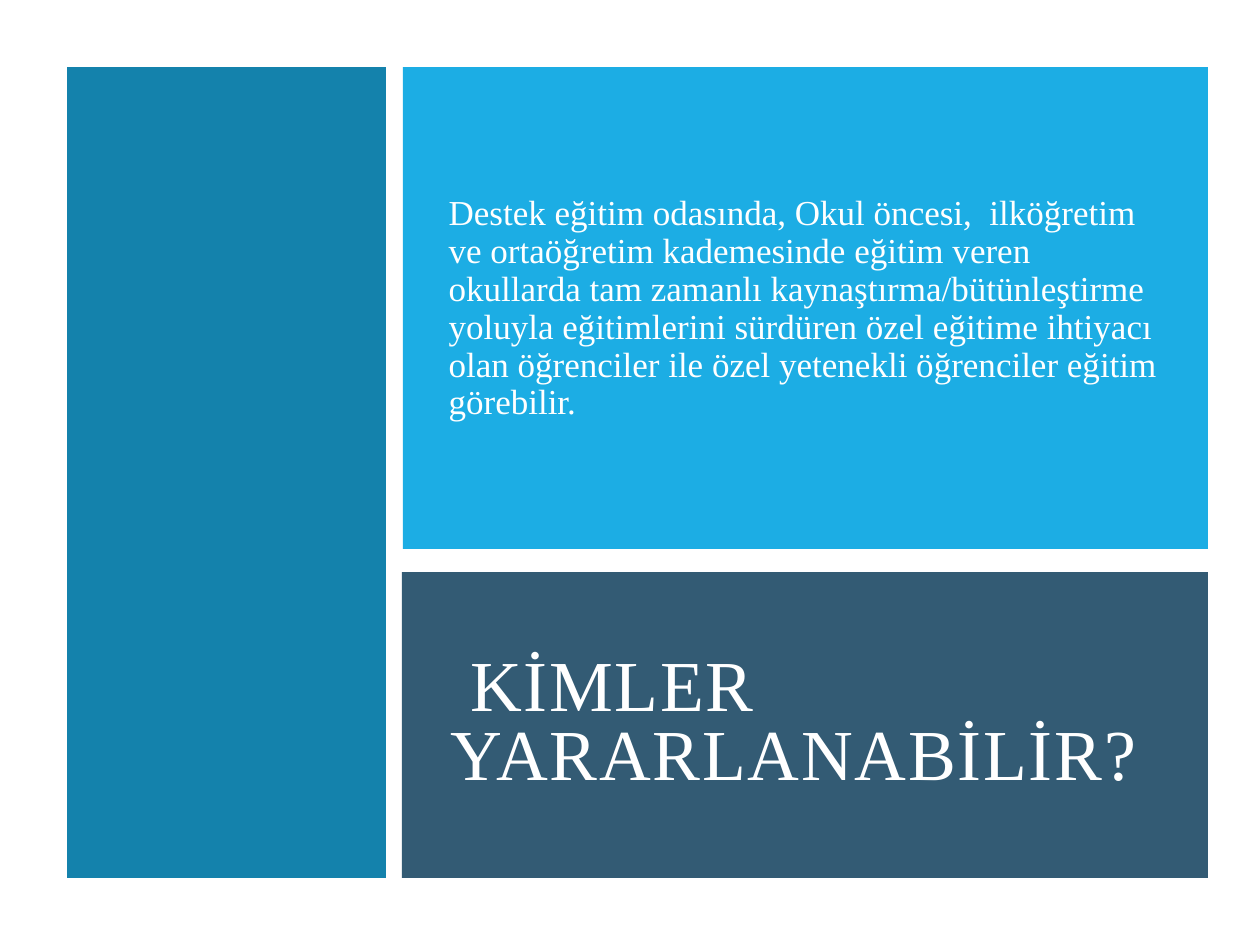
from dataclasses import dataclass

import pptx
import pptx.dml.color
import pptx.enum.shapes
import pptx.enum.text
import pptx.util
from lxml import etree

RGBColor = pptx.dml.color.RGBColor
WHITE = RGBColor(0xFF, 0xFF, 0xFF)
SKY = RGBColor(0x1C, 0xAD, 0xE4)
SLATE = RGBColor(0x33, 0x5B, 0x74)
TEAL = RGBColor(0x14, 0x82, 0xAC)

FONT = "Times New Roman"
EMU_PER_PX = 914400 / 126


@dataclass(frozen=True)
class Box:
    left: int
    top: int
    width: int
    height: int


@dataclass(frozen=True)
class Panel:
    box: Box
    color: RGBColor


@dataclass(frozen=True)
class TextStyle:
    size: int
    line_spacing: float
    space_before: int = 0
    space_after: int = 0
    letter_spacing: int = 0


PANELS = [
    Panel(Box(403, 67, 805, 482), SKY),
    Panel(Box(402, 572, 806, 306), SLATE),
    Panel(Box(67, 67, 319, 811), TEAL),
]

TITLE_TEXT = " KİMLER YARARLANABİLİR?"
TITLE_BOX = Box(438, 616, 737, 218)
TITLE_STYLE = TextStyle(size=41, line_spacing=0.8, letter_spacing=1)

BODY_TEXT = (
    "Destek eğitim odasında, Okul öncesi,  ilköğretim ve ortaöğretim "
    "kademesinde eğitim veren okullarda tam zamanlı "
    "kaynaştırma/bütünleştirme yoluyla eğitimlerini sürdüren özel eğitime "
    "ihtiyacı olan öğrenciler ile özel yetenekli öğrenciler eğitim görebilir."
)
BODY_BOX = Box(436, 111, 740, 396)
BODY_STYLE = TextStyle(size=20, line_spacing=0.9, space_before=12, space_after=2)


def px(length: int) -> pptx.util.Emu:
    return pptx.util.Emu(round(length * EMU_PER_PX))


def edges(box: Box) -> tuple[pptx.util.Emu, ...]:
    return px(box.left), px(box.top), px(box.width), px(box.height)


def draw_panel(page: pptx.slide.Slide, panel: Panel) -> None:
    shape = page.shapes.add_shape(
        pptx.enum.shapes.MSO_SHAPE.RECTANGLE, *edges(panel.box)
    )
    shape.shadow.inherit = False
    shape.fill.solid()
    shape.fill.fore_color.rgb = panel.color
    shape.line.fill.background()


def remove_bullet(para) -> None:
    properties = para._p.get_or_add_pPr()
    properties.set("marL", "0")
    properties.set("indent", "0")
    etree.SubElement(properties, pptx.oxml.ns.qn("a:buNone"))


def fill_placeholder(placeholder, box: Box, text: str, style: TextStyle) -> None:
    """Place, fill and format a placeholder, and bring it to the front."""
    placeholder.left, placeholder.top, placeholder.width, placeholder.height = edges(box)
    frame = placeholder.text_frame
    frame.word_wrap = True
    frame.auto_size = pptx.enum.text.MSO_AUTO_SIZE.NONE
    frame.vertical_anchor = pptx.enum.text.MSO_ANCHOR.MIDDLE

    para = frame.paragraphs[0]
    para.alignment = pptx.enum.text.PP_ALIGN.LEFT
    para.line_spacing = style.line_spacing
    para.space_before = pptx.util.Pt(style.space_before)
    para.space_after = pptx.util.Pt(style.space_after)
    remove_bullet(para)

    span = para.add_run()
    span.text = text
    span.font.name = FONT
    span.font.size = pptx.util.Pt(style.size)
    span.font.color.rgb = WHITE
    if style.letter_spacing:
        span.font._element.set("spc", str(style.letter_spacing * 100))

    element = placeholder._element
    element.getparent().append(element)


def main() -> None:
    deck = pptx.Presentation()
    deck.slide_width = pptx.util.Inches(10)
    deck.slide_height = pptx.util.Inches(7.5)
    page = deck.slides.add_slide(deck.slide_layouts[1])
    page.background.fill.solid()
    page.background.fill.fore_color.rgb = WHITE

    title, body = page.shapes.title, page.placeholders[1]
    for panel in PANELS:
        draw_panel(page, panel)
    fill_placeholder(title, TITLE_BOX, TITLE_TEXT, TITLE_STYLE)
    fill_placeholder(body, BODY_BOX, BODY_TEXT, BODY_STYLE)

    deck.save("out.pptx")


if __name__ == "__main__":
    main()
